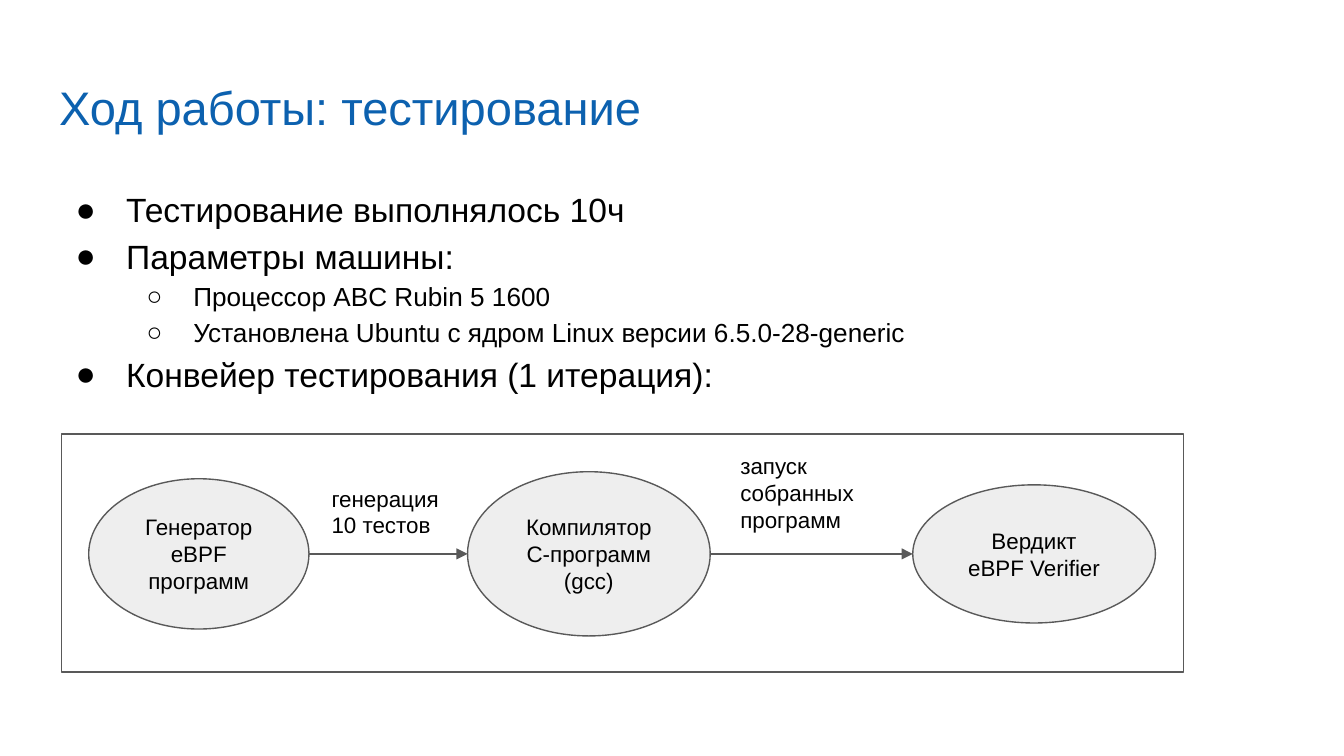
from lxml.etree import SubElement
from pptx import Presentation
from pptx.dml.color import RGBColor
from pptx.enum.shapes import MSO_CONNECTOR, MSO_SHAPE
from pptx.enum.text import MSO_ANCHOR, PP_ALIGN
from pptx.oxml.ns import qn
from pptx.util import Pt

HUES = {"title": "0C61AF", "text": "000000", "node": "EEEEEE", "line": "595959"}
MID = 296.75
INSET = 7.2
BOX = {
    "word_wrap": True,
    "margin_left": Pt(INSET),
    "margin_right": Pt(INSET),
    "margin_top": Pt(INSET),
    "margin_bottom": Pt(INSET),
}
LEVELS = [
    {"mark": "●", "size": 18, "left": 36, "hang": 27},
    {"mark": "○", "size": 14, "left": 72, "hang": 25},
]
POINTS = [
    (0, "Тестирование выполнялось 10ч"),
    (0, "Параметры машины:"),
    (1, "Процессор ABC Rubin 5 1600"),
    (1, "Установлена Ubuntu с ядром Linux версии 6.5.0-28-generic"),
    (0, "Конвейер тестирования (1 итерация):"),
]
NODES = [
    (47.5, 118, 80.5, ["Генератор", "eBPF программ"]),
    (250.5, 130, 88, ["Компилятор C-программ", "(gcc)"]),
    (489, 130, 74, ["Вердикт", "eBPF Verifier"]),
]
LABELS = [
    (170.5, 252.5, 75.5, 44, "генерация 10 тестов"),
    (389.5, 235, 91, 29, "запуск собранных программ"),
]


def color(name):
    """Return the named colour."""
    return RGBColor.from_string(HUES[name])


def apply(item, values):
    """Set each attribute of the item from a dict."""
    for name, value in values.items():
        setattr(item, name, value)


def write(frame, lines, size, hue="text", align=PP_ALIGN.LEFT, anchor=MSO_ANCHOR.TOP):
    """Fill a text frame with one paragraph per line."""
    apply(frame, {**BOX, "vertical_anchor": anchor})
    for i, line in enumerate(lines):
        para = frame.add_paragraph() if i else frame.paragraphs[0]
        para.alignment = align
        run = para.add_run()
        run.text = line
        apply(run.font, {"name": "Arial", "size": Pt(size)})
        run.font.color.rgb = color(hue)


def stroke(line):
    """Give a line its colour and width."""
    line.color.rgb = color("line")
    line.width = Pt(0.75)


def add_title(slide, text):
    """Place and format the title."""
    title = slide.shapes.title
    apply(title, {"left": Pt(24.5), "top": Pt(35), "width": Pt(671), "height": Pt(45)})
    write(title.text_frame, [text], 25.2, "title")


def add_text(slide, left, top, width, height, lines, size):
    """Add a text box and return its frame."""
    box = slide.shapes.add_textbox(Pt(left), Pt(top), Pt(width), Pt(height))
    write(box.text_frame, lines, size)
    return box.text_frame


def add_list(slide):
    """Add the list of points on two levels."""
    frame = add_text(slide, 24.5, 91, 671, 269, [text for _, text in POINTS], 18)
    for para, (depth, _) in zip(frame.paragraphs, POINTS):
        style = LEVELS[depth]
        apply(para, {"level": depth, "line_spacing": 1.15})
        para.runs[0].font.size = Pt(style["size"])
        props = para._p.get_or_add_pPr()
        props.set("marL", str(Pt(style["left"])))
        props.set("indent", str(-Pt(style["hang"])))
        tint = SubElement(props, qn("a:buClr"))
        SubElement(tint, qn("a:srgbClr"), val=HUES["text"])
        SubElement(props, qn("a:buFont"), typeface="Arial")
        SubElement(props, qn("a:buChar"), char=style["mark"])


def add_shape(slide, kind, left, top, width, height):
    """Add an outlined shape without fill or shadow."""
    shape = slide.shapes.add_shape(kind, Pt(left), Pt(top), Pt(width), Pt(height))
    shape.shadow.inherit = False
    shape.fill.background()
    stroke(shape.line)
    return shape


def add_node(slide, left, width, height, lines):
    """Add a stage of the pipeline, centred on the middle line."""
    node = add_shape(slide, MSO_SHAPE.OVAL, left, MID - height / 2, width, height)
    node.fill.solid()
    node.fill.fore_color.rgb = color("node")
    write(node.text_frame, lines, 12, align=PP_ALIGN.CENTER, anchor=MSO_ANCHOR.MIDDLE)


def add_arrow(slide, start, end):
    """Add an arrow along the middle line."""
    arrow = slide.shapes.add_connector(
        MSO_CONNECTOR.STRAIGHT, Pt(start), Pt(MID), Pt(end), Pt(MID)
    )
    stroke(arrow.line)
    SubElement(arrow.line._get_or_add_ln(), qn("a:tailEnd"), type="triangle")
    SubElement(arrow._element.spPr, qn("a:effectLst"))


def main():
    """Build the slide and save it."""
    deck = Presentation()
    apply(deck, {"slide_width": Pt(720), "slide_height": Pt(405)})
    slide = deck.slides.add_slide(deck.slide_layouts[5])
    add_title(slide, "Ход работы: тестирование")
    add_list(slide)
    for node in NODES:
        add_node(slide, *node)
    for (left, width, *_), (end, *_) in zip(NODES, NODES[1:]):
        add_arrow(slide, left + width, end)
    for *place, text in LABELS:
        add_text(slide, *place, [text], 12)
    add_shape(slide, MSO_SHAPE.RECTANGLE, 33, 232.5, 601, 127.5)
    deck.save("out.pptx")


if __name__ == "__main__":
    main()
